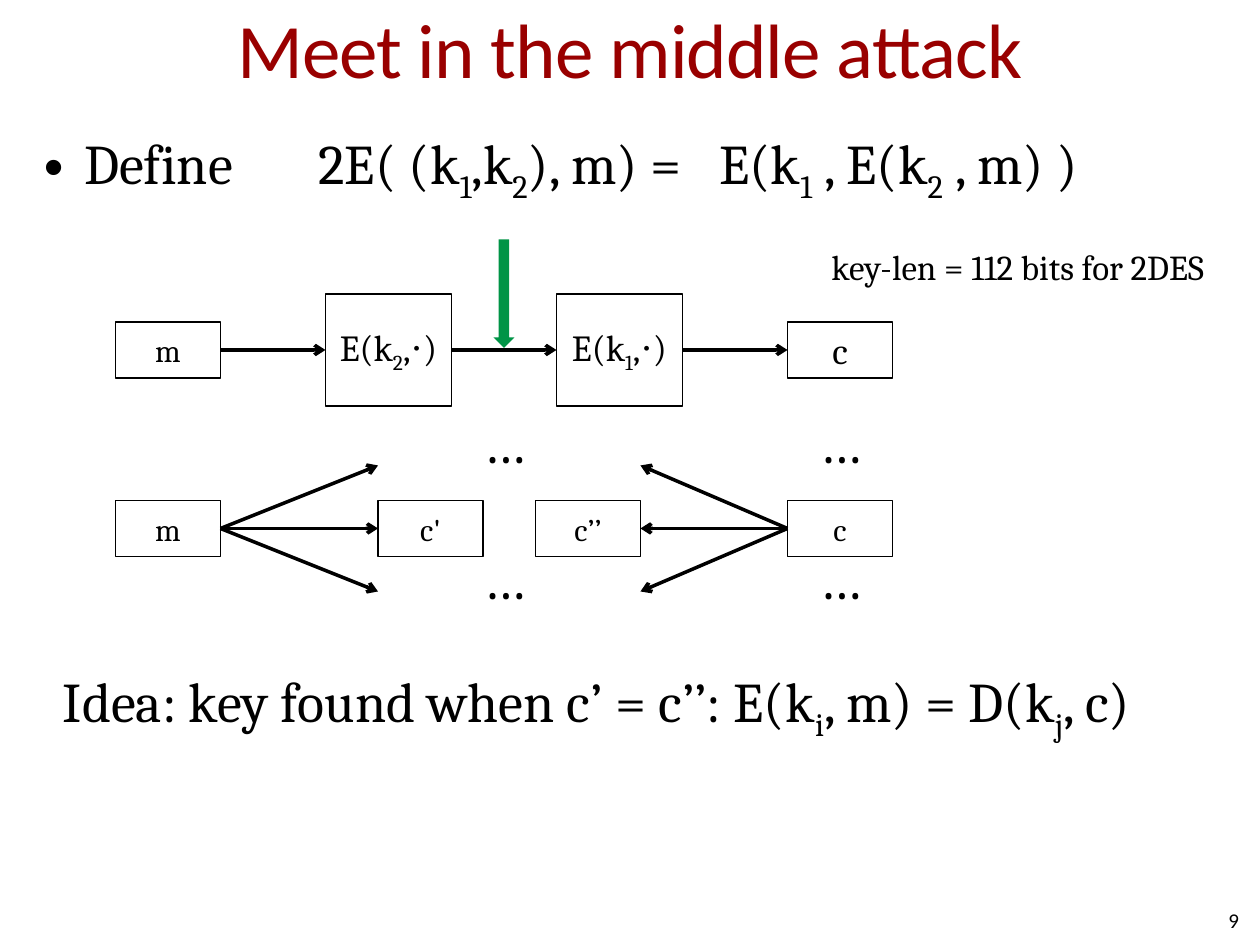
from typing import NamedTuple, Optional

from lxml import etree
from pptx import Presentation
from pptx import util as u
from pptx.dml.color import RGBColor
from pptx.enum import shapes, text
from pptx.oxml import ns

prs = Presentation()
prs.slide_width, prs.slide_height = u.Inches(10), u.Inches(7.5)
COL, ROW = prs.slide_width / 120, prs.slide_height / 270
BLACK, WHITE, RED, GREEN = "000000", "FFFFFF", "990000", "009446"
TOP, LEFT, BOTTOM, RIGHT = range(4)
MID, LEFTWARD, RIGHTWARD = (text.PP_ALIGN.CENTER, text.PP_ALIGN.LEFT,
                            text.PP_ALIGN.RIGHT)


class Box(NamedTuple):
    name: str
    label: str
    col: float
    mid: float
    wide: float = 10
    high: float = 16
    size: float = 18
    spc: int = 0


class Note(NamedTuple):
    label: str
    col: float
    row: float
    wide: float
    high: float
    size: float = 32
    inset: float = 0
    wrap: bool = True
    font: str = "Cambria"
    align: text.PP_ALIGN = LEFTWARD
    anchor: text.MSO_ANCHOR = text.MSO_ANCHOR.TOP


class Link(NamedTuple):
    start: str
    side: int
    end: Optional[str] = None
    col: float = 0
    row: float = 0


def hue(code: str) -> RGBColor:
    return RGBColor.from_string(code)


def place(col: float, row: float, wide: float, high: float) -> list:
    return [u.Emu(round(n)) for n in (col * COL, row * ROW, wide * COL, high * ROW)]


def write(para, label: str, size: float, color: str = BLACK,
          font: str = "Cambria", spc: int = 0) -> None:
    """Add runs; the letter after each underscore is a subscript."""
    first, *rest = label.split("_")
    parts = [(first, 0)]
    for part in rest:
        parts += [(part[0], -25000), (part[1:], 0)]
    for words, base in parts:
        run = para.add_run()
        run.text = words
        form = {"size": u.Pt(size), "name": font, "bold": False}
        for key, value in form.items():
            setattr(run.font, key, value)
        run.font.color.rgb = hue(color)
        for key, value in {"baseline": base, "spc": spc}.items():
            if value:
                run.font._element.set(key, str(value))


def frame(tf, inset: float, wrap: bool, anchor: text.MSO_ANCHOR) -> None:
    form = {"word_wrap": wrap, "vertical_anchor": anchor,
            "margin_left": u.Inches(inset), "margin_right": u.Inches(inset),
            "margin_top": u.Inches(inset / 2), "margin_bottom": u.Inches(inset / 2)}
    for key, value in form.items():
        setattr(tf, key, value)


def draw_note(slide, note: Note):
    shape = slide.shapes.add_textbox(*place(*note[1:5]))
    frame(shape.text_frame, note.inset, note.wrap, note.anchor)
    para = shape.text_frame.paragraphs[0]
    para.alignment = note.align
    write(para, note.label, note.size, font=note.font)
    return para


def draw_box(slide, box: Box):
    spot = place(box.col, box.mid - box.high / 2, box.wide, box.high)
    shape = slide.shapes.add_shape(shapes.MSO_SHAPE.RECTANGLE, *spot)
    shape.shadow.inherit = False
    shape.fill.solid()
    shape.fill.fore_color.rgb = hue(WHITE)
    shape.line.color.rgb = hue(BLACK)
    shape.line.width = u.Pt(0.75)
    frame(shape.text_frame, 0.1, True, text.MSO_ANCHOR.MIDDLE)
    para = shape.text_frame.paragraphs[0]
    para.alignment = MID
    write(para, box.label, box.size, spc=box.spc)
    return shape


def draw_link(slide, link: Link, made: dict) -> None:
    x, y = place(link.col, link.row, 0, 0)[:2]
    line = slide.shapes.add_connector(shapes.MSO_CONNECTOR.STRAIGHT, x, y, x, y)
    line.begin_connect(made[link.start], link.side)
    if link.end:
        line.end_connect(made[link.end], LEFT if link.side == RIGHT else RIGHT)
    line.line.color.rgb = hue(BLACK)
    line.line.width = u.Pt(2)
    etree.SubElement(line.line._get_or_add_ln(), ns.qn("a:tailEnd"), type="arrow")
    etree.SubElement(line._element.spPr, ns.qn("a:effectLst"))


def add_bullet(para, stops: tuple) -> None:
    """Hang the paragraph behind a bullet and set its tab stops."""
    indent = u.Inches(0.32)
    props = para._p.get_or_add_pPr()
    props.set("marL", str(indent))
    props.set("indent", str(-indent))
    para.space_before = u.Pt(6.4)
    font = etree.SubElement(props, ns.qn("a:buFont"))
    font.set("typeface", "Arial")
    etree.SubElement(props, ns.qn("a:buChar"), char="•")
    tabs = etree.SubElement(props, ns.qn("a:tabLst"))
    for stop in stops:
        etree.SubElement(tabs, ns.qn("a:tab"), pos=str(u.Inches(stop)), algn="l")


# Row centres of the two diagrams, and how far the fans spread
CHAIN, FAN, SPREAD = 100, 151, 18

BOXES = [
    Box("m", "m", 11, CHAIN),
    Box("E2", "E(k_2,⋅)", 31, CHAIN, 12, 32, 21),
    Box("E1", "E(k_1,⋅)", 53, CHAIN, 12, 32, 21),
    Box("c", "c", 75, CHAIN, size=21, spc=-100),
    Box("fan m", "m", 11, FAN),
    Box("c'", "c'", 36, FAN),
    Box("c''", "c’’", 51, FAN),
    Box("fan c", "c", 75, FAN),
]
LINKS = [Link("m", RIGHT, "E2"), Link("E2", RIGHT, "E1"), Link("E1", RIGHT, "c"),
         Link("fan m", RIGHT, "c'"), Link("fan c", LEFT, "c''")]
LINKS += [Link(start, side, None, col, FAN + shift)
          for start, side, col in (("fan m", RIGHT, 36), ("fan c", LEFT, 61))
          for shift in (-SPREAD, SPREAD)]
NOTES = [
    Note("key-len = 112 bits for 2DES", 78, 68.4, 41, 16, 20, 0.1, False),
    Note("Idea: key found when c’ = c’’: E(k_i, m) = D(k_j, c)", 6, 190.5, 108, 19.4),
    Note("9", 90, 255.6, 28, 14.4, 12, font="Calibri", align=RIGHTWARD,
         anchor=text.MSO_ANCHOR.MIDDLE),
]
NOTES += [Note("…", col, row, 10, 19.4) for col in (46, 78) for row in (116.3, 155.2)]


def main() -> None:
    slide = prs.slides.add_slide(prs.slide_layouts[5])

    # Title
    title = slide.shapes.title
    title.left, title.top, title.width, title.height = place(6, -9, 108, 45)
    frame(title.text_frame, 0, True, text.MSO_ANCHOR.MIDDLE)
    head = title.text_frame.paragraphs[0]
    head.alignment = MID
    write(head, "Meet in the middle attack", 44, RED, "Calibri", -50)

    # Definition, with tabs before both sides of the equation
    define = Note("Define\t2E( (k_1,k_2), m) =\tE(k_1 , E(k_2 , m) )",
                  3, 35, 114, 235, inset=0.1)
    add_bullet(draw_note(slide, define), (2.18, 5.36))

    # Remarks, dots and page number
    for note in NOTES:
        draw_note(slide, note)

    # Boxes and the arrows that join them
    made = {box.name: draw_box(slide, box) for box in BOXES}
    for link in LINKS:
        draw_link(slide, link, made)

    # Marker for the meeting point
    mark = slide.shapes.add_shape(shapes.MSO_SHAPE.DOWN_ARROW, *place(47, 68.4, 2, 31))
    mark.shadow.inherit = False
    mark.fill.solid()
    mark.fill.fore_color.rgb = hue(GREEN)
    mark.line.fill.background()

    prs.save("out.pptx")


if __name__ == "__main__":
    main()
